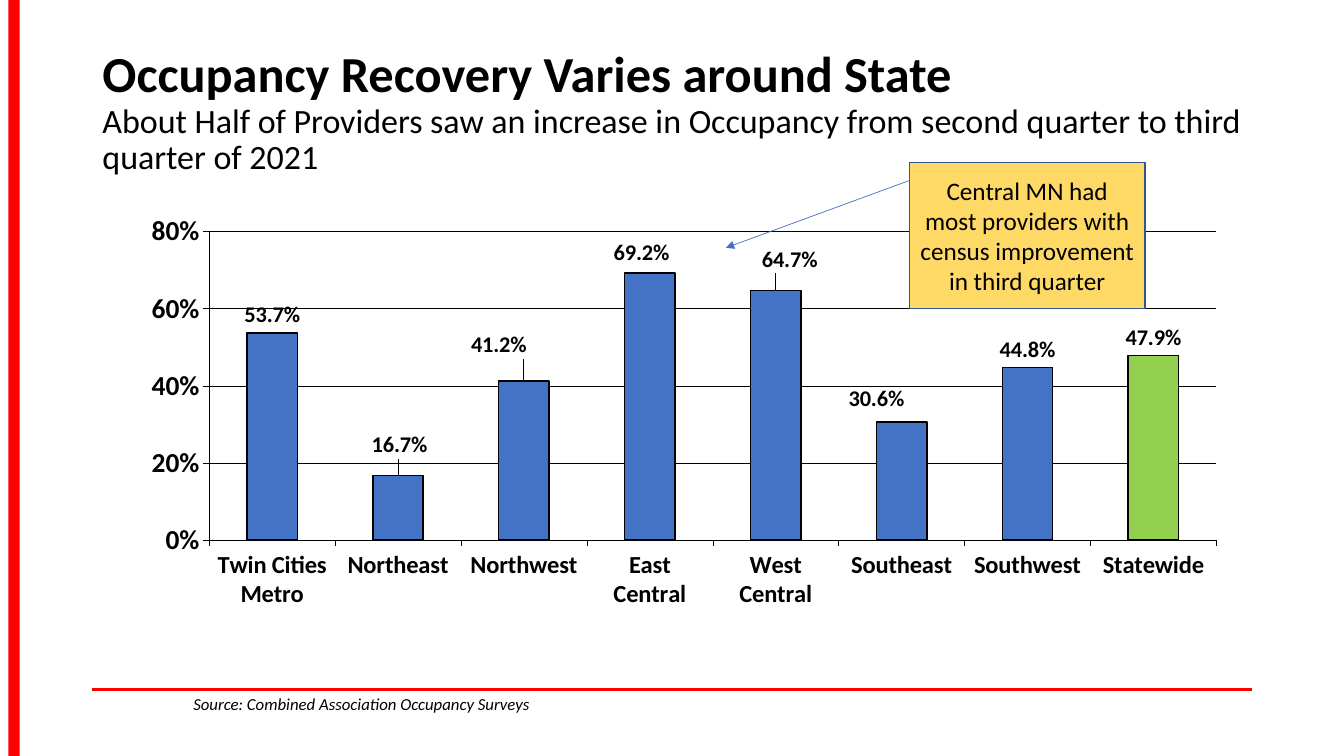
from dataclasses import dataclass

from lxml import etree
from pptx import Presentation
from pptx.chart.data import CategoryChartData
from pptx.dml.color import RGBColor
from pptx.enum.chart import XL_CHART_TYPE, XL_LABEL_POSITION, XL_TICK_MARK
from pptx.enum.shapes import MSO_CONNECTOR, MSO_SHAPE
from pptx.enum.text import MSO_ANCHOR, MSO_AUTO_SIZE, PP_ALIGN
from pptx.oxml.ns import qn
from pptx.util import Pt

COLUMNS = XL_CHART_TYPE.COLUMN_CLUSTERED
OUTSIDE_END = XL_LABEL_POSITION.OUTSIDE_END
TICK_OUTSIDE, TICK_NONE = XL_TICK_MARK.OUTSIDE, XL_TICK_MARK.NONE
STRAIGHT = MSO_CONNECTOR.STRAIGHT
RECTANGLE = MSO_SHAPE.RECTANGLE
TOP, MIDDLE = MSO_ANCHOR.TOP, MSO_ANCHOR.MIDDLE
NO_AUTOFIT = MSO_AUTO_SIZE.NONE
LEFT, CENTER = PP_ALIGN.LEFT, PP_ALIGN.CENTER


@dataclass(frozen=True)
class Theme:
    font: str = "Calibri"
    ink: str = "000000"
    accent: str = "FF0000"
    bar: str = "4472C4"
    statewide: str = "92D050"
    callout: str = "FFD966"
    callout_edge: str = "325491"
    title: float = 36
    subtitle: float = 24.3
    note: float = 18
    source: float = 12
    value_axis: float = 19.6
    category_axis: float = 17.5
    label: float = 16


THEME = Theme()

OCCUPANCY_GAINS = {
    "Twin Cities Metro": 0.537,
    "Northeast": 0.167,
    "Northwest": 0.412,
    "East Central": 0.692,
    "West Central": 0.647,
    "Southeast": 0.306,
    "Southwest": 0.448,
    "Statewide": 0.479,
}
# Label shifts from the outside end of the bar, in points
LABEL_SHIFTS = {
    "Northeast": (1, -9),
    "Northwest": (-18, -13),
    "East Central": (-6, -2),
    "West Central": (10, -9),
    "Southeast": (-18, -4),
}
CHART_BOX = (41, 141, 828, 343)
PLOT_BOX = (0.131, 0.071, 0.869, 0.643)


def rgb(code):
    return RGBColor.from_string(code)


def style_font(font, size, bold=False, italic=False):
    font.name = THEME.font
    font.size = Pt(size)
    font.bold = bold
    font.italic = italic
    font.color.rgb = rgb(THEME.ink)


def style_line(line, color, width):
    line.color.rgb = rgb(color)
    line.width = Pt(width)


def write(shape, *lines, align=LEFT, anchor=TOP, spacing=None):
    """Fill a shape with one paragraph; each line is (text, font keywords)."""
    frame = shape.text_frame
    frame.word_wrap = True
    frame.auto_size = NO_AUTOFIT
    frame.vertical_anchor = anchor
    paragraph = frame.paragraphs[0]
    paragraph.alignment = align
    paragraph.line_spacing = spacing
    for number, (text, font) in enumerate(lines):
        if number:
            paragraph.add_line_break()
        run = paragraph.add_run()
        run.text = text
        style_font(run.font, **font)


def add_box(slide, box, fill, edge=None):
    shape = slide.shapes.add_shape(RECTANGLE, *map(Pt, box))
    shape.shadow.inherit = False
    shape.fill.solid()
    shape.fill.fore_color.rgb = rgb(fill)
    if edge:
        style_line(shape.line, edge, 1)
    else:
        shape.line.fill.background()
    return shape


def add_line(slide, ends, color, width, arrow=False):
    connector = slide.shapes.add_connector(STRAIGHT, *map(Pt, ends))
    style_line(connector.line, color, width)
    if arrow:
        etree.SubElement(connector.line._get_or_add_ln(), qn("a:tailEnd"), type="triangle")
    etree.SubElement(connector._element.spPr, qn("a:effectLst"))


def manual_layout(**values):
    layout = etree.Element(qn("c:layout"))
    manual = etree.SubElement(layout, qn("c:manualLayout"))
    for tag, value in values.items():
        etree.SubElement(manual, qn(f"c:{tag}"), val=str(value))
    return layout


def place_plot(chart):
    plot_area = chart._chartSpace.find(".//" + qn("c:plotArea"))
    for old in plot_area.findall(qn("c:layout")):
        plot_area.remove(old)
    x, y, w, h = PLOT_BOX
    plot_area.insert(0, manual_layout(layoutTarget="inner", xMode="edge", yMode="edge",
                                      x=x, y=y, w=w, h=h))


def style_axis(axis, size):
    axis.major_tick_mark = TICK_OUTSIDE
    axis.minor_tick_mark = TICK_NONE
    style_font(axis.tick_labels.font, size, bold=True)
    style_line(axis.format.line, THEME.ink, 0.27)


def style_labels(labels):
    style_font(labels.font, THEME.label, bold=True)
    labels.position = OUTSIDE_END


def shift_labels(series):
    regions = list(OCCUPANCY_GAINS)
    for region in LABEL_SHIFTS:
        style_labels(series.points[regions.index(region)].data_label)
    for label, (dx, dy) in zip(series._element.iter(qn("c:dLbl")), LABEL_SHIFTS.values()):
        label.insert(1, manual_layout(x=dx / CHART_BOX[2], y=dy / CHART_BOX[3]))


def add_occupancy_chart(slide):
    data = CategoryChartData(number_format="0.0%")
    data.categories = list(OCCUPANCY_GAINS)
    data.add_series("Series 1", list(OCCUPANCY_GAINS.values()))
    chart = slide.shapes.add_chart(COLUMNS, *map(Pt, CHART_BOX), data).chart
    chart.has_legend = False
    chart.has_title = False
    style_font(chart.font, THEME.value_axis, bold=True)
    place_plot(chart)

    style_axis(chart.category_axis, THEME.category_axis)
    percent = chart.value_axis
    style_axis(percent, THEME.value_axis)
    percent.minimum_scale, percent.maximum_scale, percent.major_unit = 0, 0.8, 0.2
    percent.tick_labels.number_format = "0%"
    percent.tick_labels.number_format_is_linked = False
    style_line(percent.major_gridlines.format.line, THEME.ink, 0.27)

    plot = chart.plots[0]
    plot.gap_width = 150
    plot.vary_by_categories = False
    series = plot.series[0]
    statewide = series.points[len(OCCUPANCY_GAINS) - 1]
    for bars, color in ((series, THEME.bar), (statewide, THEME.statewide)):
        bars.format.fill.solid()
        bars.format.fill.fore_color.rgb = rgb(color)
        style_line(bars.format.line, THEME.ink, 1.09)

    labels = series.data_labels
    labels.show_value = True
    labels.number_format = "0.0%"
    labels.number_format_is_linked = False
    style_labels(labels)
    shift_labels(series)


def main():
    deck = Presentation()
    deck.slide_width, deck.slide_height = Pt(960), Pt(540)
    slide = deck.slides.add_slide(deck.slide_layouts[5])
    add_line(slide, (66, 492.5, 894, 492.5), THEME.accent, 2)
    add_box(slide, (6, 0, 8, 540), THEME.accent)

    title = slide.shapes.title
    title.left, title.top, title.width, title.height = map(Pt, (66, 28.75, 828, 104.4))
    write(title,
          ("Occupancy Recovery Varies around State", dict(size=THEME.title, bold=True)),
          ("About Half of Providers saw an increase in Occupancy from second quarter "
           "to third quarter of 2021", dict(size=THEME.subtitle)),
          anchor=MIDDLE, spacing=0.9)

    add_occupancy_chart(slide)
    source = slide.shapes.add_textbox(*map(Pt, (131, 492, 379.5, 36)))
    write(source, ("Source: Combined Association Occupancy Surveys",
                   dict(size=THEME.source, italic=True)))
    callout = add_box(slide, (649.5, 116, 168.5, 104.4), THEME.callout, THEME.callout_edge)
    write(callout, ("Central MN had most providers with census improvement in third quarter",
                    dict(size=THEME.note)), align=CENTER, anchor=MIDDLE)
    add_line(slide, (649.5, 129, 518.5, 177), THEME.bar, 0.5, arrow=True)
    deck.save("out.pptx")


if __name__ == "__main__":
    main()
